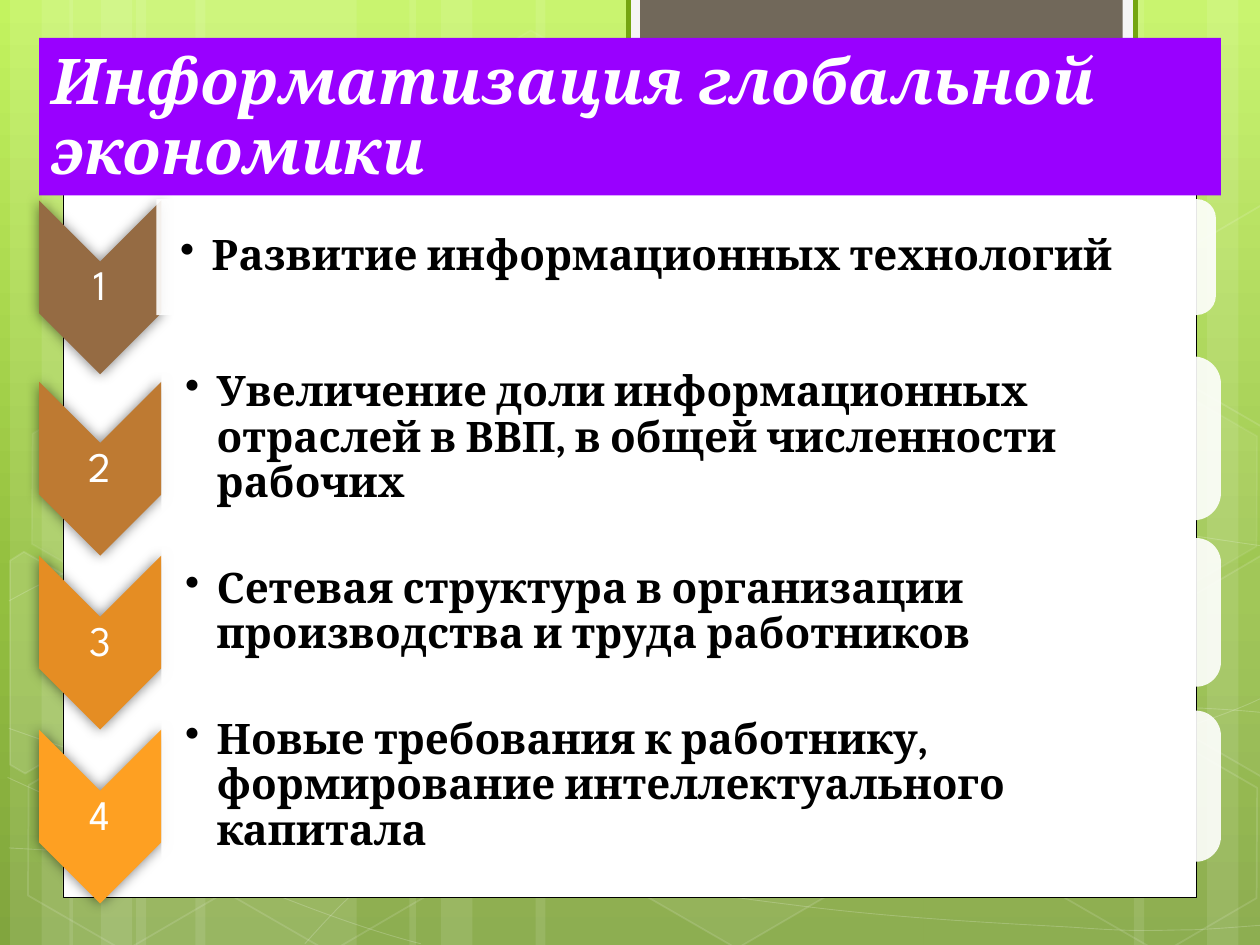
from lxml import etree
from pptx import Presentation
from pptx.dml.color import RGBColor
from pptx.enum.shapes import MSO_SHAPE
from pptx.enum.text import MSO_ANCHOR, PP_ALIGN
from pptx.oxml.ns import qn
from pptx.util import Inches, Pt

RECT, HEXAGON = MSO_SHAPE.RECTANGLE, MSO_SHAPE.HEXAGON
CHEVRON, TAB = MSO_SHAPE.CHEVRON, MSO_SHAPE.ROUND_2_SAME_RECTANGLE
MIDDLE, BOTTOM = MSO_ANCHOR.MIDDLE, MSO_ANCHOR.BOTTOM
LEFT, CENTER = PP_ALIGN.LEFT, PP_ALIGN.CENTER

WHITE, BLACK = RGBColor(255, 255, 255), RGBColor(0, 0, 0)
PURPLE = RGBColor(0x99, 0x00, 0xFF)
TAUPE, PALE = RGBColor(0x71, 0x68, 0x5A), RGBColor(0xF5, 0xF5, 0xF5)
GREEN = RGBColor(0x74, 0xA5, 0x10)
BACKGROUND_STOPS = [(0, "C3F35F"), (62, "93BF3F"), (100, "81A53E")]

# Content
TITLE = "Информатизация глобальной экономики"
# text, bar left, bar centre, bar height, chevron colour
TRENDS = [
    ("Развитие информационных технологий",
     1.24, 2.04, 0.92, RGBColor(0x95, 0x6B, 0x43)),
    ("Увеличение доли информационных отраслей в ВВП, в общей численности рабочих",
     1.28, 3.48, 1.3, RGBColor(0xBE, 0x7A, 0x32)),
    ("Сетевая структура в организации производства и труда работников",
     1.28, 4.86, 1.18, RGBColor(0xE5, 0x8D, 0x23)),
    ("Новые требования к работнику, формирование интеллектуального капитала",
     1.28, 6.24, 1.2, RGBColor(0xFE, 0xA0, 0x22)),
]

# Background decoration: stripes (left, width)
STRIPES = [(1.08, 1.75), (0.08, 0.5), (0.33, 0.83), (1.55, 1.75), (0.55, 0.5), (0.8, 0.83),
           (7.33, 1.75), (9.58, 0.5), (9, 0.83), (4.25, 3.08), (3.25, 0.5), (3.5, 0.83)]
# Bezier curves: a start point, then three points per segment
CURVES = [
    [(0.07, 6.73), (0.61, 6.76), (1.15, 6.79), (1.9, 6.78), (2.65, 6.77), (3.58, 6.75),
     (4.58, 6.65), (5.58, 6.55), (7, 6.36), (7.92, 6.17), (8.83, 5.98), (9.77, 5.68),
     (10.07, 5.51)],
    [(0.07, 4.77), (0.36, 4.61), (0.65, 4.46), (1.21, 4.31), (1.78, 4.16), (2.59, 3.94),
     (3.47, 3.87), (4.36, 3.8), (5.44, 3.79), (6.54, 3.87), (7.64, 3.95), (9.47, 4.26),
     (10.07, 4.34)],
    [(0.06, 6.17), (1.27, 6.72), (2.47, 7.27), (3.34, 7.49)],
    [(0.07, 5.78), (0.38, 5.89), (0.7, 6), (1.28, 6.16), (1.86, 6.31), (2.73, 6.56),
     (3.57, 6.73), (4.4, 6.9), (5.45, 7.08), (6.28, 7.18), (7.11, 7.29), (8, 7.33),
     (8.53, 7.36), (9.05, 7.4), (9.19, 7.38), (9.45, 7.38), (9.71, 7.37), (9.89, 7.35),
     (10.07, 7.34)],
    [(2.42, 7.49), (2.6, 7.29), (2.78, 7.09), (3.02, 6.91), (3.26, 6.73), (3.6, 6.53),
     (3.88, 6.39), (4.16, 6.25), (4.33, 6.19), (4.7, 6.09), (5.06, 5.99), (5.73, 5.85),
     (6.08, 5.78), (6.44, 5.71), (6.49, 5.71), (6.8, 5.69), (7.11, 5.66), (7.6, 5.63),
     (7.94, 5.62), (8.29, 5.61), (8.86, 5.62), (8.86, 5.62), (9.08, 5.62), (9.31, 5.62),
     (9.53, 5.62), (9.71, 5.63), (9.88, 5.64), (10.06, 5.66)],
]
# Whole hexagons: left, top, fill opacity, line opacity
HEXAGONS = [(3.34, 0.36, 4, 8), (4.97, 5.89, 6, 12), (0.11, 5.91, 0, 12), (0.14, 3.12, 7, 8),
            (1.74, 5.92, 0, 12), (7.53, 4.53, 10, 12), (8.34, 5.93, 0, 12), (8.34, 3.14, 7, 8)]
# Hexagons cut by the slide edge: points, fill opacity
CUT_HEXAGONS = [
    ([(0.08, 4.45), (0.19, 4.38), (0.96, 4.82), (0.95, 5.7), (0.2, 6.14), (0.08, 6.07)], 10),
    ([(9.26, 4.85), (10.01, 4.41), (10.09, 4.46), (10.09, 6.13), (10.02, 6.17), (9.26, 5.73)], 4),
    ([(9.26, 2.07), (10.01, 1.63), (10.1, 1.68), (10.09, 3.35), (10.02, 3.39), (9.26, 2.95)], 0),
]


def set_alpha(element, percent):
    color = element.find(".//" + qn("a:srgbClr"))
    etree.SubElement(color, qn("a:alpha"), val=str(percent * 1000))


def paint(shape, fill=None, opacity=100, line=None, line_width=1, line_opacity=100):
    shape.shadow.inherit = False
    if fill is None or opacity == 0:
        shape.fill.background()
    else:
        shape.fill.solid()
        shape.fill.fore_color.rgb = fill
        if opacity < 100:
            set_alpha(shape.element.spPr.find(qn("a:solidFill")), opacity)
    if line is None:
        shape.line.fill.background()
    else:
        shape.line.color.rgb = line
        shape.line.width = Pt(line_width)
        if line_opacity < 100:
            set_alpha(shape.element.spPr.find(qn("a:ln")), line_opacity)


def add_box(kind, left, top, width, height, **style):
    shape = shapes.add_shape(kind, Inches(left), Inches(top), Inches(width), Inches(height))
    paint(shape, **style)
    return shape


def add_turned(kind, center_x, center_y, length, breadth, **style):
    """Add a shape turned a quarter clockwise about its centre."""
    shape = add_box(kind, center_x - length / 2, center_y - breadth / 2, length, breadth, **style)
    shape.rotation = 90
    return shape


def add_outline(points, closed, **style):
    start, *others = [(Inches(x), Inches(y)) for x, y in points]
    builder = shapes.build_freeform(*start)
    builder.add_line_segments(others, close=closed)
    shape = builder.convert_to_shape()
    paint(shape, **style)
    return shape


def bend(shape):
    """Join every three line segments into one Bezier segment."""
    lines = shape.element.findall(".//" + qn("a:lnTo"))
    for first, second, third in zip(lines[::3], lines[1::3], lines[2::3]):
        first.tag = qn("a:cubicBezTo")
        for other in (second, third):
            first.append(other[0])
            other.getparent().remove(other)


def write(shape, text, font, size, color, anchor=MIDDLE, align=LEFT, spacing=0.9,
          bold=False, italic=False):
    frame = shape.text_frame
    frame.text = text
    frame.word_wrap = True
    frame.vertical_anchor = anchor
    paragraph = frame.paragraphs[0]
    paragraph.alignment = align
    paragraph.line_spacing = spacing
    style = paragraph.runs[0].font
    style.name, style.size, style.bold, style.italic = font, Pt(size), bold, italic
    style.color.rgb = color
    return paragraph


def add_label(left, center_y, width, height, inset, text, *style, **options):
    box = shapes.add_textbox(Inches(left), Inches(center_y - height / 2),
                             Inches(width), Inches(height))
    frame = box.text_frame
    frame.margin_left = Inches(inset)
    frame.margin_right = frame.margin_top = frame.margin_bottom = Inches(0.02)
    return write(box, text, *style, **options)


prs = Presentation()
prs.slide_width, prs.slide_height = Inches(10), Inches(7.5)
slide = prs.slides.add_slide(prs.slide_layouts[5])
shapes = slide.shapes

# Background gradient
slide.background.fill.gradient()
gradient = slide.element.find(".//" + qn("a:gradFill"))
stops = gradient.find(qn("a:gsLst"))
stops.clear()
for position, color in BACKGROUND_STOPS:
    stop = etree.SubElement(stops, qn("a:gs"), pos=str(position * 1000))
    etree.SubElement(stop, qn("a:srgbClr"), val=color)
gradient.find(qn("a:lin")).set("ang", str(90 * 60000))

# Stripes, curves and hexagons
for left, width in STRIPES:
    add_box(RECT, left, 0, width, 7.5, fill=WHITE, opacity=10)
for points in CURVES:
    bend(add_outline(points, False, line=WHITE, line_width=0.5, line_opacity=20))
for left, top, opacity, line_opacity in HEXAGONS:
    hexagon = add_box(HEXAGON, left, top, 1.75, 1.52, fill=WHITE, opacity=opacity,
                      line=WHITE, line_opacity=line_opacity)
    hexagon.adjustments[0] = 0.285
    hexagon.rotation = 30
for points, opacity in CUT_HEXAGONS:
    add_outline(points, True, fill=WHITE, opacity=opacity, line=WHITE, line_opacity=12)

# White page and top tab
add_box(RECT, 0.5, 0.36, 9, 6.76, fill=WHITE, line=BLACK, line_width=0.5)
add_box(RECT, 4.99, -0.02, 4.02, 0.76, fill=PALE, line=GREEN, line_width=3)
add_box(RECT, 5.08, -0.02, 3.83, 0.68, fill=TAUPE)

# Title, brought in front of the decoration
title = shapes.title
shapes.element.append(title.element)
title.left, title.top, title.width, title.height = map(Inches, (0.31, 0.3, 9.38, 1.25))
title.fill.solid()
title.fill.fore_color.rgb = PURPLE
write(title, TITLE, "Cambria", 36, WHITE, anchor=BOTTOM, spacing=0.93, bold=True, italic=True)

# Numbered chevrons with their bars
BAR_WIDTH, CHEVRON_LENGTH, CHEVRON_BREADTH = 8.41, 1.38, 0.97
CHEVRON_LEFT, CHEVRON_DROP = 0.31, 0.24
for number, (trend, left, center, height, color) in enumerate(TRENDS, 1):
    chevron_center = center + CHEVRON_DROP
    chevron = add_turned(CHEVRON, CHEVRON_LEFT + CHEVRON_BREADTH / 2, chevron_center,
                         CHEVRON_LENGTH, CHEVRON_BREADTH, fill=color)
    shadow = etree.SubElement(chevron.element.spPr.find(qn("a:effectLst")), qn("a:outerShdw"),
                              blurRad=str(Pt(7.5)), dist="0", dir="0")
    etree.SubElement(shadow, qn("a:srgbClr"), val="000000")
    set_alpha(shadow, 50)
    add_label(CHEVRON_LEFT, chevron_center, CHEVRON_BREADTH, 0.41, 0.02, str(number),
              "League Spartan", 24, WHITE, align=CENTER)

    add_turned(TAB, left + BAR_WIDTH / 2, center, height, BAR_WIDTH, fill=WHITE, opacity=90)
    item = add_label(left, center, 8.35, height - 0.11, 0.19, trend,
                     "Cambria", 24, BLACK, bold=True)
    properties = item._p.get_or_add_pPr()
    properties.set("marL", str(Inches(0.25)))
    properties.set("indent", str(Inches(-0.25)))
    etree.SubElement(properties, qn("a:buChar"), char="•")

prs.save("out.pptx")
